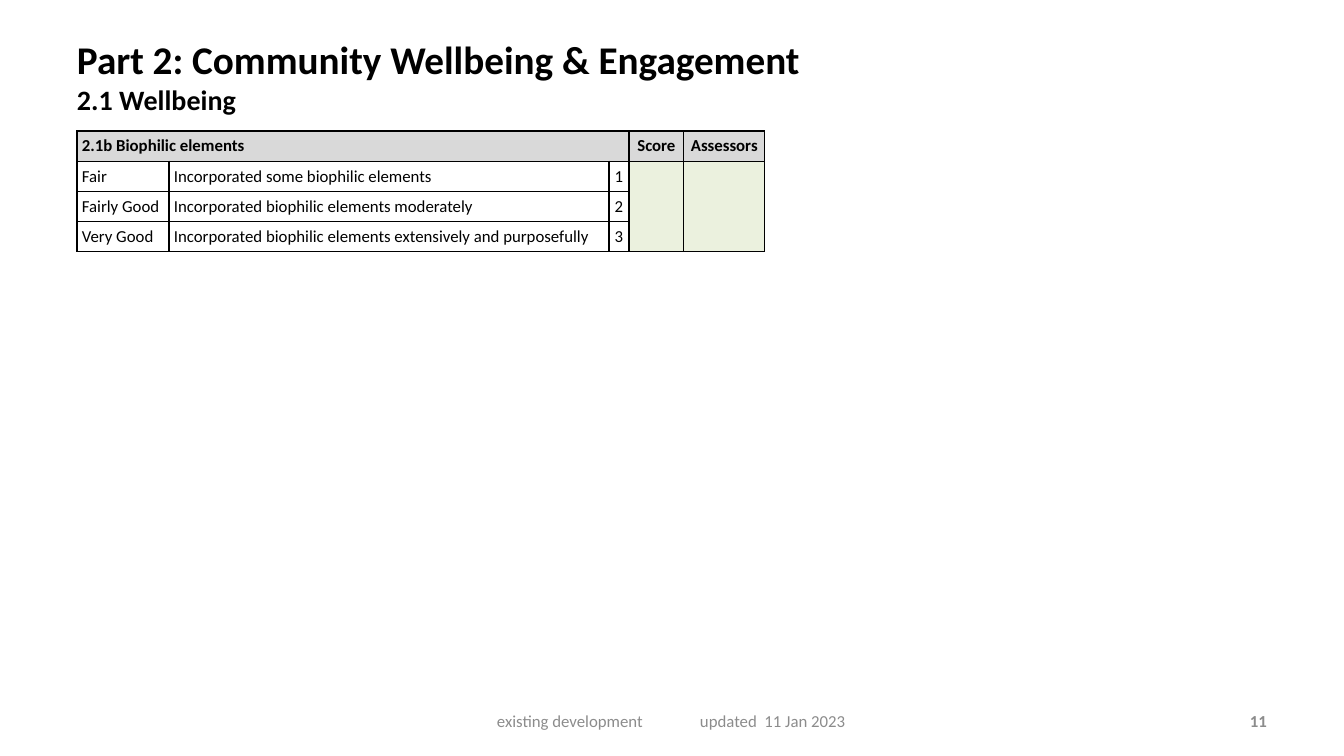
import lxml.etree
import pptx
import pptx.dml.color
import pptx.enum.text
import pptx.oxml.ns
import pptx.util

PX = 914400 / 100.8
COLORS = {"ink": "000000", "muted": "8C8C8C", "header": "D9D9D9",
          "score": "EBF1DE", "paper": "FFFFFF"}
ALIGN = pptx.enum.text.PP_ALIGN
ANCHOR = pptx.enum.text.MSO_ANCHOR
qn = pptx.oxml.ns.qn


def px(n):
    return pptx.util.Emu(round(n * PX))


def rgb(name):
    return pptx.dml.color.RGBColor.from_string(COLORS[name])


def write(p, text, size=12, bold=False, color="ink", align=ALIGN.LEFT):
    p.alignment = align
    r = p.add_run()
    r.text = text
    r.font.name = "Calibri"
    r.font.size = pptx.util.Pt(size)
    r.font.bold = bold
    r.font.color.rgb = rgb(color)


def set_insets(target, x, y):
    target.margin_left = target.margin_right = px(x)
    target.margin_top = target.margin_bottom = px(y)


def add_title(s, x, y, w, h):
    sp = s.shapes.title
    sp.left, sp.top, sp.width, sp.height = px(x), px(y), px(w), px(h)
    tf = sp.text_frame
    tf.word_wrap = True
    tf.auto_size = pptx.enum.text.MSO_AUTO_SIZE.NONE
    tf.vertical_anchor = ANCHOR.TOP
    set_insets(tf, 10, 5)
    p = tf.paragraphs[0]
    write(p, "Part 2: Community Wellbeing & Engagement", size=28, bold=True)
    p.add_line_break()
    write(p, "2.1 Wellbeing", size=20, bold=True)


def add_borders(cell):
    tcPr = cell._tc.get_or_add_tcPr()
    for i, side in enumerate(("a:lnL", "a:lnR", "a:lnT", "a:lnB")):
        ln = lxml.etree.Element(qn(side), w=str(pptx.util.Pt(1)))
        fill = lxml.etree.SubElement(ln, qn("a:solidFill"))
        lxml.etree.SubElement(fill, qn("a:srgbClr"), val=COLORS["ink"])
        tcPr.insert(i, ln)


def add_score_table(s, x, y, col_widths, row_height):
    rows = [
        ("2.1b Biophilic elements", "", "", "Score", "Assessors"),
        ("Fair", "Incorporated some biophilic elements", "1", "", ""),
        ("Fairly Good", "Incorporated biophilic elements moderately", "2", "", ""),
        ("Very Good", "Incorporated biophilic elements extensively and purposefully",
         "3", "", ""),
    ]
    table = s.shapes.add_table(len(rows), len(col_widths), px(x), px(y),
                               px(sum(col_widths)), px(row_height * len(rows))).table
    table.first_row = table.horz_banding = False
    for column, width in zip(table.columns, col_widths):
        column.width = px(width)
    table.cell(0, 0).merge(table.cell(0, 2))
    for col in (3, 4):
        table.cell(1, col).merge(table.cell(3, col))

    for i, row in enumerate(rows):
        for j, text in enumerate(row):
            cell = table.cell(i, j)
            cell.vertical_anchor = ANCHOR.MIDDLE
            set_insets(cell, 5, 5)
            cell.fill.solid()
            fill = "header" if i == 0 else "score" if j > 2 else "paper"
            cell.fill.fore_color.rgb = rgb(fill)
            add_borders(cell)
            write(cell.text_frame.paragraphs[0], text, bold=i == 0,
                  align=ALIGN.CENTER if j > 1 else ALIGN.LEFT)


def add_footer_box(s, x, y, w, h):
    tf = s.shapes.add_textbox(px(x), px(y), px(w), px(h)).text_frame
    tf.word_wrap = True
    tf.vertical_anchor = ANCHOR.MIDDLE
    set_insets(tf, 10, 5)
    return tf


def add_footer(s, x, y, w, h):
    tf = add_footer_box(s, x, y, w, h)
    tf.margin_left = px(37)
    p = tf.paragraphs[0]
    tabs = lxml.etree.SubElement(p._p.get_or_add_pPr(), qn("a:tabLst"))
    lxml.etree.SubElement(tabs, qn("a:tab"), pos=str(px(203)), algn="l")
    write(p, "existing development\tupdated  11 Jan 2023", color="muted")


def add_page_number(s, x, y, w, h):
    tf = add_footer_box(s, x, y, w, h)
    write(tf.paragraphs[0], "11", bold=True, color="muted", align=ALIGN.RIGHT)


def main():
    prs = pptx.Presentation()
    prs.slide_width, prs.slide_height = px(1344), px(756)
    s = prs.slides.add_slide(prs.slide_layouts.get_by_name("Title Only"))
    add_page_number(s, 963, 701, 314, 40)
    add_title(s, 67, 30, 1044, 100)
    add_score_table(s, 77, 131, (92, 440, 20, 55, 81), 30)
    add_footer(s, 460, 701, 425, 40)
    prs.save("out.pptx")


if __name__ == "__main__":
    main()
